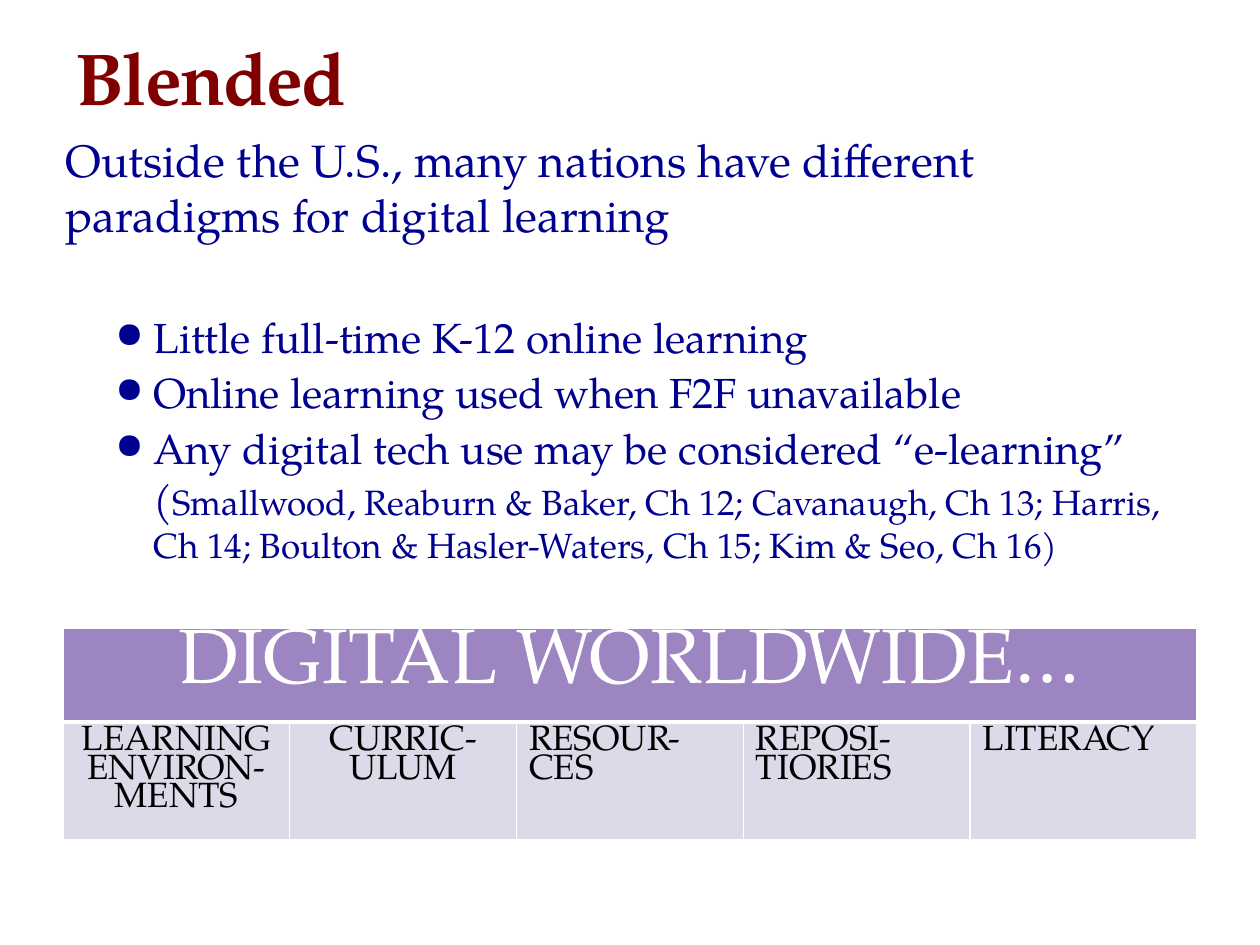
from lxml import etree
from pptx import Presentation
from pptx import util as u
from pptx.dml.color import RGBColor
from pptx.enum import text
from pptx.oxml import ns

PX = 914400 // 126
FONT = "TeX Gyre Pagella"
MAROON = RGBColor(0x80, 0x00, 0x00)
NAVY = RGBColor(0x00, 0x00, 0x90)
PURPLE = RGBColor(0x9C, 0x85, 0xC0)
LILAC = RGBColor(0xDE, 0xD9, 0xE8)
WHITE = RGBColor(0xFF, 0xFF, 0xFF)
BLACK = RGBColor(0x00, 0x00, 0x00)


def add_run(paragraph, words, size, color, bold=False):
    run = paragraph.add_run()
    run.text = words
    style = {"name": FONT, "size": u.Pt(size), "bold": bold}
    for key, value in style.items():
        setattr(run.font, key, value)
    run.font.color.rgb = color
    return run


def add_frame(left, top, width, height, anchor):
    box = slide.shapes.add_textbox(left * PX, top * PX, width * PX, height * PX)
    box.text_frame.word_wrap = True
    box.text_frame.vertical_anchor = anchor
    return box.text_frame


prs = Presentation()
prs.slide_width, prs.slide_height = 1260 * PX, 945 * PX
slide = prs.slides.add_slide(prs.slide_layouts[6])

# Title
title = add_frame(63, 21, 1134, 105, text.MSO_ANCHOR.BOTTOM)
heading = add_run(title.paragraphs[0], "Blended", 42, MAROON, bold=True)
heading.font._element.set("spc", "-100")

# Introduction
body = add_frame(53, 126, 1134, 756, text.MSO_ANCHOR.TOP)
intro = body.paragraphs[0]
intro.space_before = u.Pt(6)
add_run(intro, "Outside the U.S., many nations have different paradigms for digital learning", 26, NAVY)

# Bulleted points, the first set apart from the introduction
points = [
    "Little full-time K-12 online learning",
    "Online learning used when F2F unavailable",
    "Any digital tech use may be considered “e-learning”",
]
for number, words in enumerate(points):
    point = body.add_paragraph()
    point.space_before = u.Pt(3 if number else 40)
    props = point._p.get_or_add_pPr()
    props.set("marL", str(88 * PX))
    props.set("indent", str(-38 * PX))
    etree.SubElement(props, ns.qn("a:buSzPct"), val="85000")
    etree.SubElement(props, ns.qn("a:buChar"), char="●")
    add_run(point, words, 24, NAVY)

# Citations under the last point
point.add_line_break()
add_run(point, "(", 24, NAVY)
add_run(point, "Smallwood, Reaburn & Baker, Ch 12; Cavanaugh, Ch 13; Harris, Ch 14; "
        "Boulton & Hasler-Waters, Ch 15; Kim & Seo, Ch 16)", 20, NAVY)

# Table: one banner over five topics
CENTER, LEFT = text.PP_ALIGN.CENTER, text.PP_ALIGN.LEFT
topics = [
    (["LEARNING ENVIRON-MENTS"], CENTER),
    (["CURRIC-ULUM"], CENTER),
    (["RESOUR-", "CES"], LEFT),
    (["REPOSI-", "TIORIES"], LEFT),
    (["LITERACY"], LEFT),
]
table = slide.shapes.add_table(2, len(topics), 63 * PX, 628 * PX, 1134 * PX, 212 * PX).table
for row, height in zip(table.rows, (94, 118)):
    row.height = height * PX
banner = table.cell(0, 0)
banner.merge(table.cell(0, len(topics) - 1))

contents = [(banner, ["DIGITAL WORLDWIDE…"], CENTER, 44, WHITE, PURPLE, 3)]
for column, (lines, align) in enumerate(topics):
    contents.append((table.cell(1, column), lines, align, 20, BLACK, LILAC, 1))

for cell, lines, align, size, color, fill, bottom in contents:
    for number, words in enumerate(lines):
        frame = cell.text_frame
        paragraph = frame.add_paragraph() if number else frame.paragraphs[0]
        paragraph.alignment = align
        paragraph.line_spacing = 0.8
        add_run(paragraph, words, size, color)
    # Borders come before the fill in the cell properties
    props = cell._tc.get_or_add_tcPr()
    for side, width in {"L": 1, "R": 1, "T": 1, "B": bottom}.items():
        border = etree.SubElement(props, ns.qn("a:ln" + side), w=str(u.Pt(width)))
        solid = etree.SubElement(border, ns.qn("a:solidFill"))
        etree.SubElement(solid, ns.qn("a:srgbClr"), val=str(WHITE))
    cell.fill.solid()
    cell.fill.fore_color.rgb = fill

prs.save("out.pptx")
